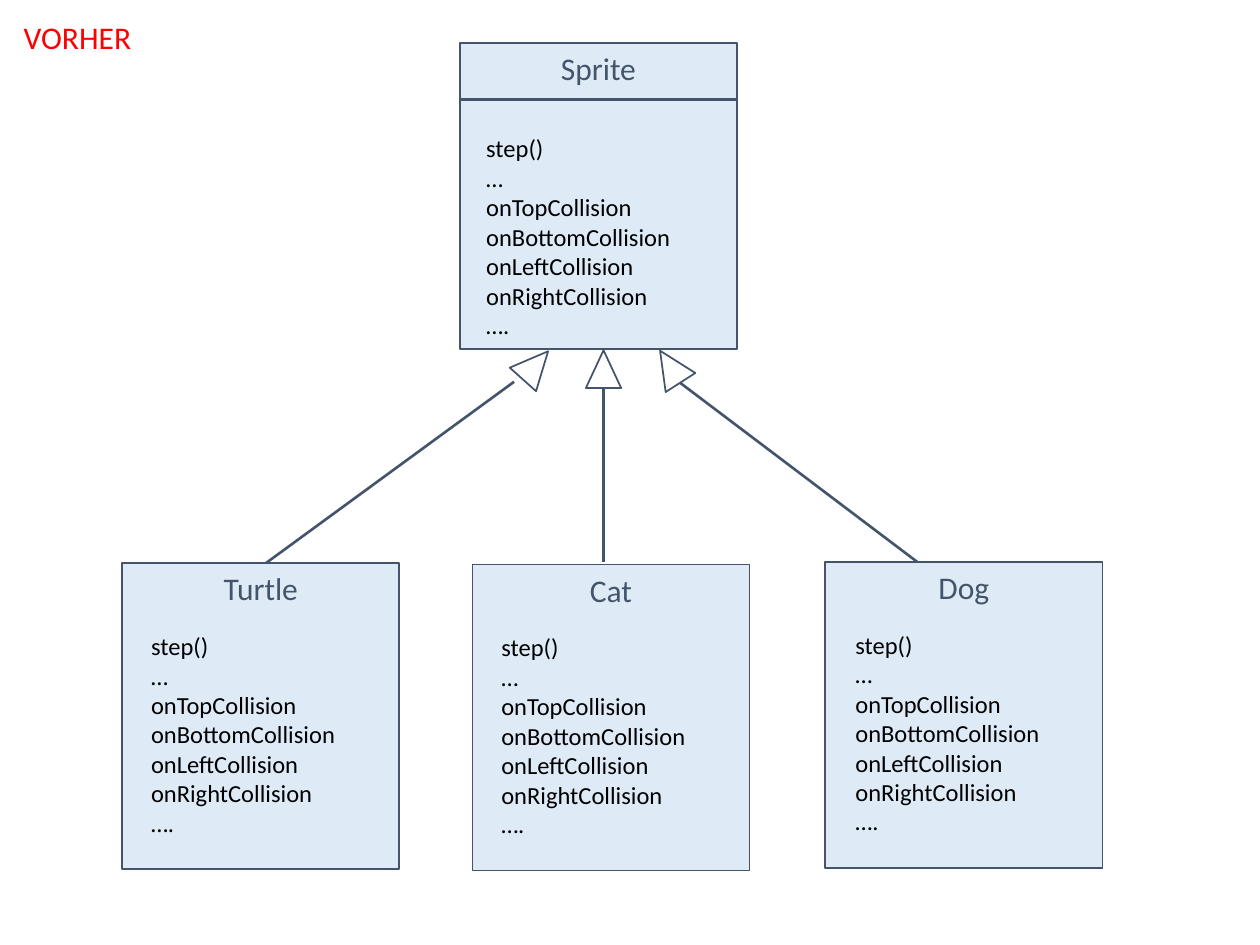
from lxml import etree
from pptx import Presentation
from pptx.dml.color import RGBColor
from pptx.enum.shapes import MSO_CONNECTOR, MSO_SHAPE
from pptx.enum.text import MSO_ANCHOR, MSO_AUTO_SIZE, PP_ALIGN
from pptx.oxml.ns import qn
from pptx.util import Inches, Pt

RECTANGLE, TRIANGLE = MSO_SHAPE.RECTANGLE, MSO_SHAPE.ISOSCELES_TRIANGLE
STRAIGHT = MSO_CONNECTOR.STRAIGHT
TOP = MSO_ANCHOR.TOP
LEFT, CENTER = PP_ALIGN.LEFT, PP_ALIGN.CENTER
FIT_SHAPE = MSO_AUTO_SIZE.SHAPE_TO_FIT_TEXT
INK, PALE, RED, BLACK = "44546A", "DEEBF7", "FF0000", "000000"

prs = Presentation()
prs.slide_width, prs.slide_height = Inches(10), Inches(7.5)
slide = prs.slides.add_slide(prs.slide_layouts[6])
shapes = slide.shapes

# Grid of 100 columns by 75 rows
COL, ROW = prs.slide_width / 100, prs.slide_height / 75
CLASS_W, CLASS_H = 22, 24.3
HEAD_W, HEAD_H = 2.8, 3
METHODS = ["step()", "…", "onTopCollision", "onBottomCollision",
           "onLeftCollision", "onRightCollision", "…."]


def place(kind, left, top, width, height):
    """Add a shape, text box (kind None) or line, measured in grid cells."""
    x, y, w, h = (round(n) for n in (left * COL, top * ROW, width * COL, height * ROW))
    if kind is None:
        return shapes.add_textbox(x, y, w, h)
    if kind is STRAIGHT:
        item = shapes.add_connector(kind, x, y, x + w, y + h)
        item.line.width = Pt(1.5)
    else:
        item = shapes.add_shape(kind, x, y, w, h)
        item.line.width = Pt(1)
    item.line.color.rgb = RGBColor.from_string(INK)
    # An empty effect list turns the theme shadow off
    etree.SubElement(item._element.spPr, qn("a:effectLst"))
    return item


def write(item, lines, size=18, color=INK, align=LEFT, wrap=False):
    frame = item.text_frame
    frame.word_wrap = wrap
    frame.vertical_anchor = TOP
    if not wrap:
        frame.auto_size = FIT_SHAPE
    for i, line in enumerate(lines):
        paragraph = frame.add_paragraph() if i else frame.paragraphs[0]
        paragraph.alignment = align
        run = paragraph.add_run()
        run.text = line
        run.font.name, run.font.size = "Calibri", Pt(size)
        run.font.color.rgb = RGBColor.from_string(color)


# Class boxes: name, left, top, inset of the methods
classes = [
    ("Sprite", 36.5, 3.4, 1.1, 6.7),
    ("Turtle", 9.7, 44.7, 1.3, 4.9),
    ("Cat", 37.5, 44.8, 1.3, 4.9),
    ("Dog", 65.5, 44.6, 1.4, 4.9),
]
# Inheritance arrows: line start x, y, end x, y, head left, top, rotation
arrows = [
    (21.1, 44.7, 40.8, 30.3, 41.1, 27.5, 41.9),
    (47.9, 44.6, 47.9, 30.8, 46.5, 27.8, 0),
    (72.8, 44.6, 54, 30.4, 51.8, 27.6, 327.3),
]

for name, left, top, inset_x, inset_y in classes:
    class_box = place(RECTANGLE, left, top, CLASS_W, CLASS_H)
    class_box.fill.solid()
    class_box.fill.fore_color.rgb = RGBColor.from_string(PALE)
    write(class_box, [name], align=CENTER, wrap=True)

    # Rule under the name of the base class
    if name == "Sprite":
        place(STRAIGHT, left, top + 4.5, CLASS_W, 0)

    methods = place(None, left + inset_x, top + inset_y, 16.8, 17.5)
    write(methods, METHODS, size=14, color=BLACK)

    # Arrows lie above the base class and below the subclasses
    if name == "Sprite":
        for x1, y1, x2, y2, head_left, head_top, turn in arrows:
            place(STRAIGHT, x1, y1, x2 - x1, y2 - y1)
            arrowhead = place(TRIANGLE, head_left, head_top, HEAD_W, HEAD_H)
            arrowhead.fill.background()
            arrowhead.rotation = turn

# Slide label
write(place(None, 0.9, 0.9, 10.6, 4), ["VORHER"], color=RED)

prs.save("out.pptx")
